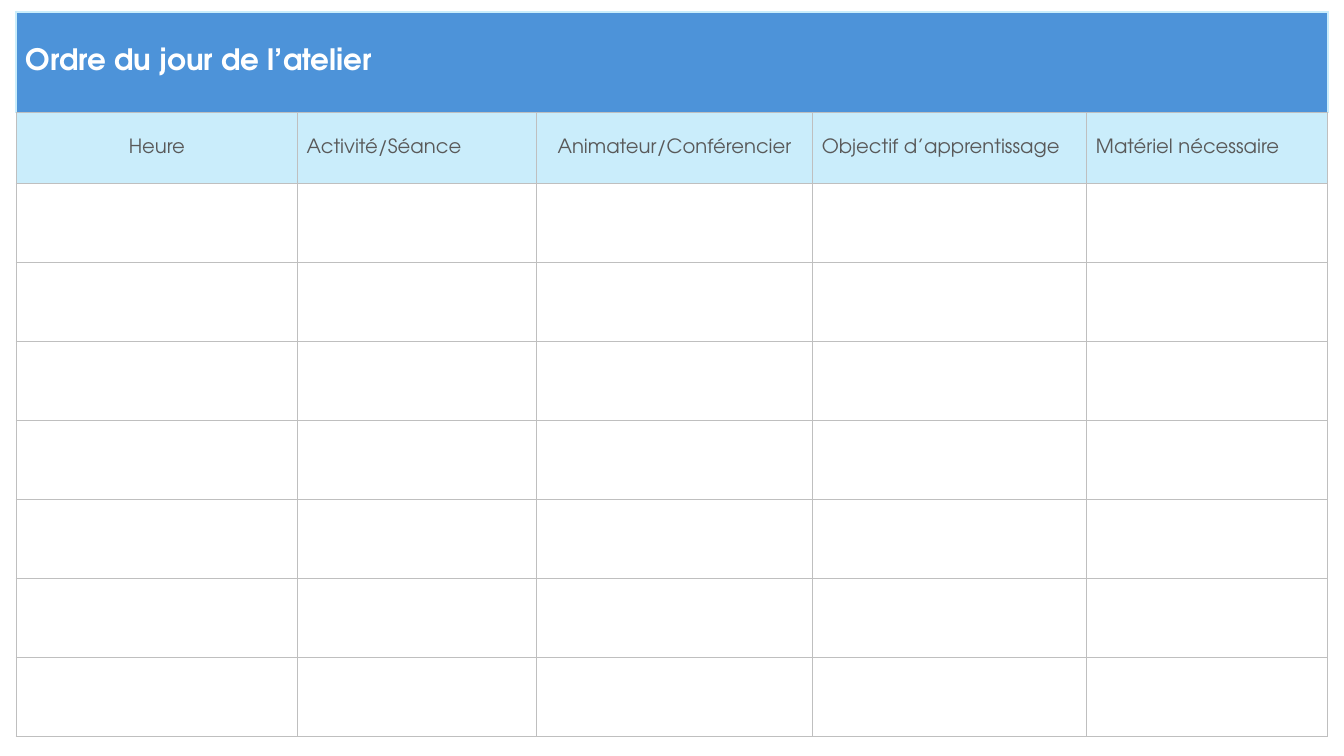
import lxml.etree
import pptx
import pptx.dml.color
import pptx.enum.text
import pptx.oxml.ns
import pptx.util

Cm = pptx.util.Cm
Pt = pptx.util.Pt
RGBColor = pptx.dml.color.RGBColor
PP_ALIGN = pptx.enum.text.PP_ALIGN

FONT = "TeX Gyre Adventor"
WHITE = RGBColor(0xFF, 0xFF, 0xFF)
BLUE = RGBColor(0x4D, 0x93, 0xD9)
PALE_BLUE = RGBColor(0xCA, 0xED, 0xFB)
DARK_GREY = RGBColor(0x59, 0x59, 0x59)
GRID_GREY = RGBColor(0xBF, 0xBF, 0xBF)

TITLE = "Ordre du jour de l’atelier"
# Heading, column width in centimetres, alignment
COLUMNS = [
    ("Heure", 7.09, PP_ALIGN.CENTER),
    ("Activité/Séance", 6.02, PP_ALIGN.LEFT),
    ("Animateur/Conférencier", 6.96, PP_ALIGN.CENTER),
    ("Objectif d’apprentissage", 6.91, PP_ALIGN.LEFT),
    ("Matériel nécessaire", 6.07, PP_ALIGN.LEFT),
]
SESSION_COUNT = 7
ROW_HEIGHTS = [2.54, 1.78] + [1.99] * SESSION_COUNT


def set_borders(cell, sides):
    """Draw the borders given as {side: (colour, points)}, sides being L, R, T and B."""
    properties = cell._tc.get_or_add_tcPr()
    for position, side in enumerate("LRTB"):
        colour, points = sides[side]
        line = lxml.etree.Element(pptx.oxml.ns.qn(f"a:ln{side}"), w=str(Pt(points)))
        fill = lxml.etree.SubElement(line, pptx.oxml.ns.qn("a:solidFill"))
        lxml.etree.SubElement(fill, pptx.oxml.ns.qn("a:srgbClr"), val=str(colour))
        properties.insert(position, line)


def fill_cell(cell, colour):
    cell.fill.solid()
    cell.fill.fore_color.rgb = colour


def write_cell(cell, text, size, colour, alignment=PP_ALIGN.LEFT, bold=False):
    cell.vertical_anchor = pptx.enum.text.MSO_ANCHOR.MIDDLE
    cell.margin_left = Cm(0.02 if alignment == PP_ALIGN.CENTER else 0.23)
    cell.margin_right = cell.margin_top = Cm(0.02)
    cell.margin_bottom = 0
    paragraph = cell.text_frame.paragraphs[0]
    paragraph.text = text
    paragraph.alignment = alignment
    font = paragraph.runs[0].font
    font.name = FONT
    font.size = Pt(size)
    font.bold = bold
    font.color.rgb = colour


def add_grid(slide):
    """Add the empty agenda table with its column widths and row heights."""
    widths = [width for _, width, _ in COLUMNS]
    frame = slide.shapes.add_table(
        len(ROW_HEIGHTS), len(COLUMNS),
        Cm(0.41), Cm(0.3), Cm(sum(widths)), Cm(sum(ROW_HEIGHTS)),
    )
    table = frame.table
    table.first_row = False
    table.horz_banding = False
    for column, width in zip(table.columns, widths):
        column.width = Cm(width)
    for row, height in zip(table.rows, ROW_HEIGHTS):
        row.height = Cm(height)
    return table


def format_title_row(table):
    title_cell = table.cell(0, 0)
    title_cell.merge(table.cell(0, len(COLUMNS) - 1))
    write_cell(title_cell, TITLE, 21, WHITE, bold=True)
    borders = dict.fromkeys("LRT", (PALE_BLUE, 1.5))
    borders["B"] = (GRID_GREY, 1)
    for cell in table.rows[0].cells:
        fill_cell(cell, BLUE)
        set_borders(cell, borders)


def format_heading_row(table):
    for cell, (heading, _, alignment) in zip(table.rows[1].cells, COLUMNS):
        fill_cell(cell, PALE_BLUE)
        write_cell(cell, heading, 14, DARK_GREY, alignment)


def format_session_rows(table):
    for row in list(table.rows)[2:]:
        for cell in row.cells:
            cell.fill.background()


def draw_grid_lines(table):
    for row in list(table.rows)[1:]:
        for cell in row.cells:
            set_borders(cell, dict.fromkeys("LRTB", (GRID_GREY, 1)))


def main():
    presentation = pptx.Presentation()
    presentation.slide_width = Cm(33.87)
    presentation.slide_height = Cm(19.05)
    blank_layout = presentation.slide_layouts.get_by_name("Blank")
    slide = presentation.slides.add_slide(blank_layout)
    table = add_grid(slide)
    format_title_row(table)
    format_heading_row(table)
    format_session_rows(table)
    draw_grid_lines(table)
    presentation.save("out.pptx")


if __name__ == "__main__":
    main()
